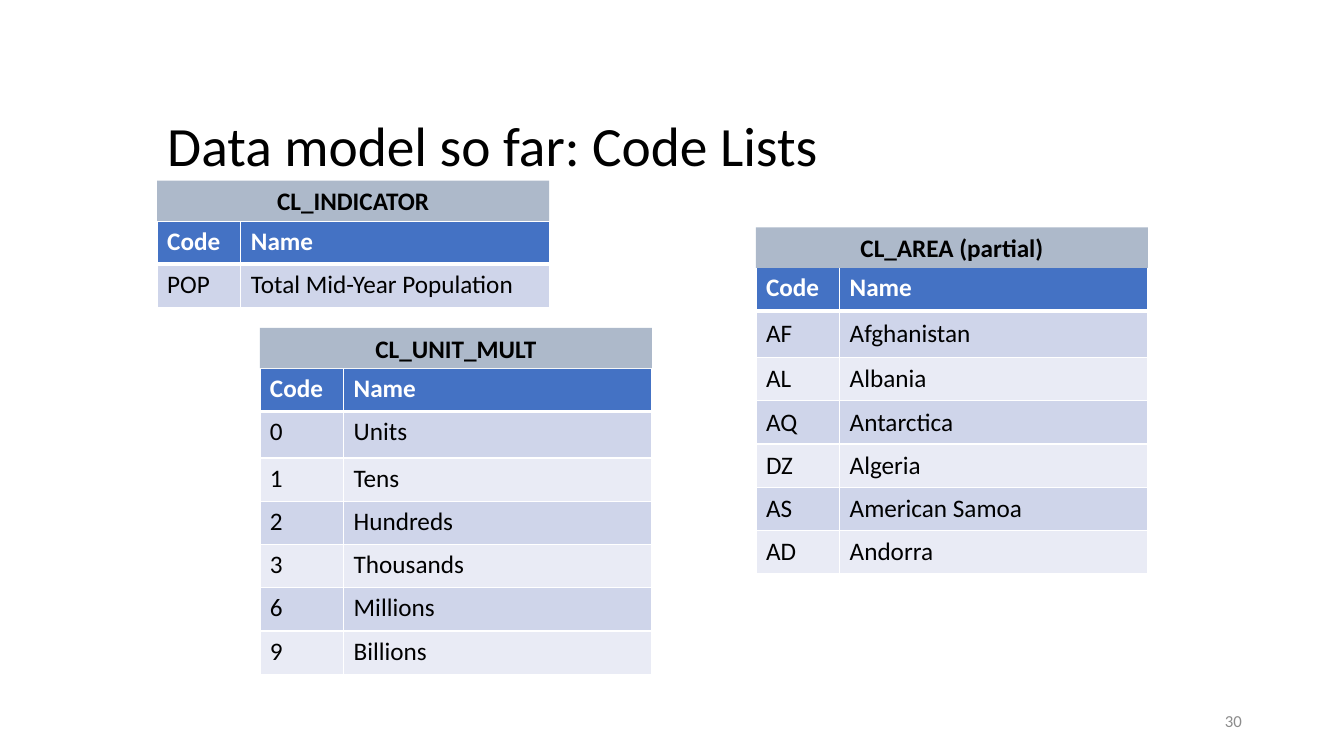
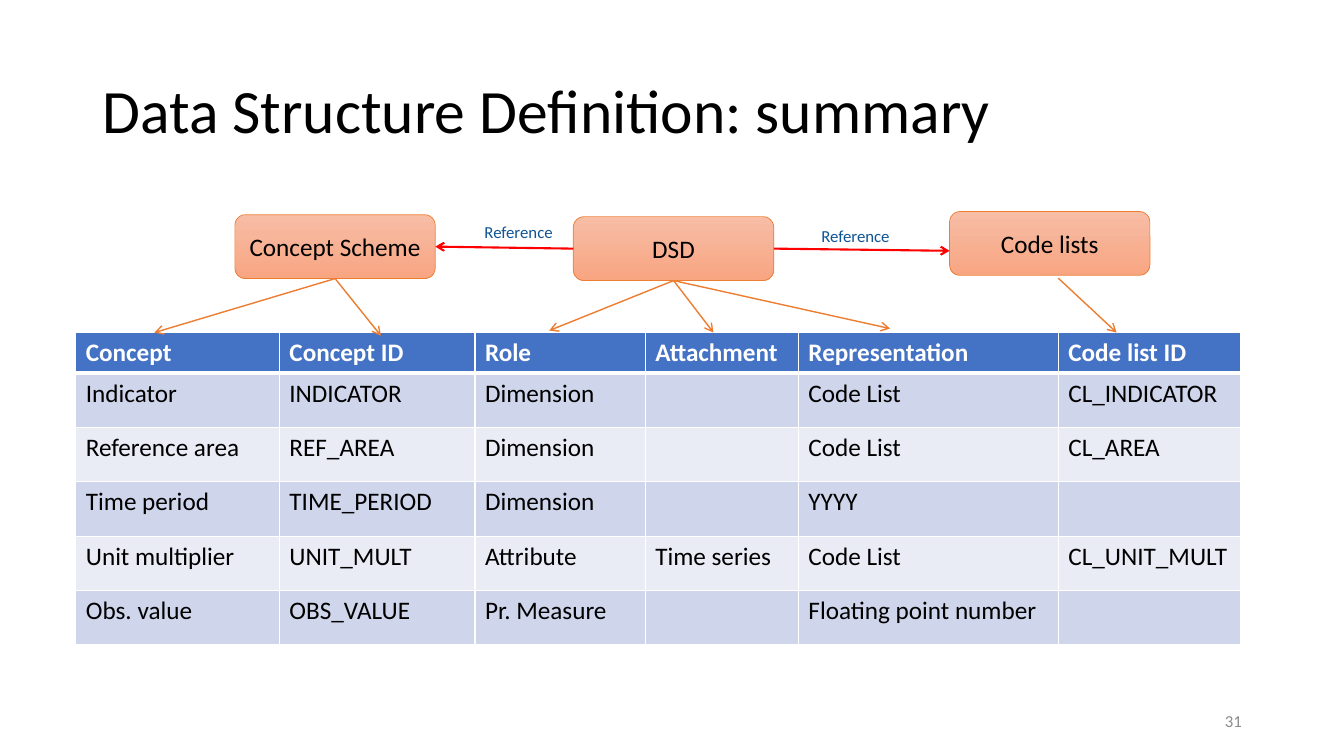
import pptx
import pptx.util
import pptx.dml.color
import pptx.enum.shapes
import pptx.enum.text
import pptx.oxml
import pptx.oxml.ns

Cm, Pt = pptx.util.Cm, pptx.util.Pt
SHAPES = pptx.enum.shapes.MSO_SHAPE
ALIGN = pptx.enum.text.PP_ALIGN
ANCHOR = pptx.enum.text.MSO_ANCHOR

FONT = "Calibri"
COLORS = {
    "text": "000000", "white": "FFFFFF", "page_number": "8C8C8C",
    "header": "4472C4", "band_dark": "CFD5EA", "band_light": "E9EBF5",
    "caption": "ADB9CA", "node_top": "F7BDA5", "node_bottom": "F8A582",
    "orange": "ED7D31", "red": "FF0000", "reference": "0F5494",
}
BOTTOM, LEFT, RIGHT = 2, 1, 3

# Lengths are in centimetres; boxes are left, top, width, height.
CODE_COLUMNS = (2.11, 7.77)
CAPTION_HEIGHT = 1.02
ROW_HEIGHT = 1.09
TALL_ROW_HEIGHT = 1.17
CODE_HEADER = ("Code", "Name")
CODE_LISTS = [
    {"name": "CL_INDICATOR", "left": 3.96, "top": 4.55, "anchor": ANCHOR.TOP,
     "codes": [("POP", "Total Mid-Year Population")]},
    {"name": "CL_UNIT_MULT", "left": 6.55, "top": 8.26, "anchor": ANCHOR.TOP,
     "codes": [("0", "Units"), ("1", "Tens"), ("2", "Hundreds"),
               ("3", "Thousands"), ("6", "Millions"), ("9", "Billions")]},
    {"name": "CL_AREA (partial)", "left": 19.05, "top": 5.73, "anchor": ANCHOR.MIDDLE,
     "codes": [("AF", "Afghanistan"), ("AL", "Albania"), ("AQ", "Antarctica"),
               ("DZ", "Algeria"), ("AS", "American Samoa"), ("AD", "Andorra")]},
]

CONCEPT_COLUMNS = (5.13, 4.93, 4.29, 3.86, 6.55, 4.6)
CONCEPTS = [
    ("Concept", "Concept ID", "Role", "Attachment", "Representation", "Code list ID"),
    ("Indicator", "INDICATOR", "Dimension", "", "Code List", "CL_INDICATOR"),
    ("Reference area", "REF_AREA", "Dimension", "", "Code List", "CL_AREA"),
    ("Time period", "TIME_PERIOD", "Dimension", "", "YYYY", ""),
    ("Unit multiplier", "UNIT_MULT", "Attribute", "Time series", "Code List",
     "CL_UNIT_MULT"),
    ("Obs. value", "OBS_VALUE", "Pr. Measure", "", "Floating point number", ""),
]
NODE_SIZE = (5.05, 1.61)
NODES = {"Concept Scheme": (5.92, 5.41), "DSD": (14.45, 5.46), "Code lists": (23.93, 5.33)}
# Each end is a point or a (node, side) pair.
ARROWS = [
    (("Concept Scheme", BOTTOM), (3.89, 8.38), "orange", 1),
    (("Concept Scheme", BOTTOM), (9.6, 8.46), "orange", 1),
    (("DSD", BOTTOM), (13.84, 8.33), "orange", 1),
    (("DSD", BOTTOM), (17.98, 8.38), "orange", 1),
    (("DSD", BOTTOM), (22.43, 8.28), "orange", 1),
    ((26.67, 7.01), (28.14, 8.38), "orange", 1),
    (("DSD", LEFT), ("Concept Scheme", RIGHT), "red", 1.5),
    (("DSD", RIGHT), (23.93, 6.32), "red", 1.5),
]
REFERENCE_LABELS = [(11.96, 5.46), (20.45, 5.56)]


def rgb(name):
    return pptx.dml.color.RGBColor.from_string(COLORS[name])


def write(frame, text, size=18, color="text", bold=False, align=ALIGN.LEFT):
    frame.text = text
    paragraph = frame.paragraphs[0]
    paragraph.alignment = align
    font = paragraph.font
    font.name, font.size, font.bold = FONT, Pt(size), bold
    font.color.rgb = rgb(color)
    return paragraph


def add_slide(deck, title, box, size, number):
    slide = deck.slides.add_slide(deck.slide_layouts[5])
    heading = slide.shapes.title
    heading.left, heading.top, heading.width, heading.height = map(Cm, box)
    heading.text_frame.vertical_anchor = ANCHOR.MIDDLE
    heading.text_frame.auto_size = pptx.enum.text.MSO_AUTO_SIZE.NONE
    write(heading.text_frame, title, size).line_spacing = 0.9
    add_label(slide, (23.93, 17.65, 7.62, 1.01), str(number), "page_number", ALIGN.RIGHT)
    return slide


def add_label(slide, box, text, color, align=ALIGN.LEFT):
    frame = slide.shapes.add_textbox(*map(Cm, box)).text_frame
    frame.word_wrap = True
    frame.vertical_anchor = ANCHOR.MIDDLE
    write(frame, text, 12, color, align=align)


def add_borders(cell, row):
    """White cell borders, thick between the header and the body."""
    widths = {"L": 1, "R": 1, "T": 3 if row == 1 else 1, "B": 3 if row == 0 else 1}
    for side, width in widths.items():
        cell._tc.get_or_add_tcPr().append(pptx.oxml.parse_xml(
            f'<a:ln{side} {pptx.oxml.ns.nsdecls("a")} w="{Pt(width)}"><a:solidFill>'
            f'<a:srgbClr val="{COLORS["white"]}"/></a:solidFill></a:ln{side}>'))


def add_banded_table(slide, left, top, columns, heights, rows, body_anchor=ANCHOR.TOP):
    table = slide.shapes.add_table(
        len(rows), len(columns), Cm(left), Cm(top),
        Cm(sum(columns)), Cm(sum(heights))).table
    for column, width in zip(table.columns, columns):
        column.width = Cm(width)
    for r, (values, height) in enumerate(zip(rows, heights)):
        table.rows[r].height = Cm(height)
        header = r == 0
        band = "header" if header else "band_dark" if r % 2 else "band_light"
        for c, value in enumerate(values):
            cell = table.cell(r, c)
            add_borders(cell, r)
            cell.fill.solid()
            cell.fill.fore_color.rgb = rgb(band)
            cell.vertical_anchor = ANCHOR.TOP if header else body_anchor
            write(cell.text_frame, value, color="white" if header else "text", bold=header)


def add_code_list(slide, code_list):
    left, top = code_list["left"], code_list["top"]
    codes = code_list["codes"]
    heights = [ROW_HEIGHT] * (len(codes) + 1)
    if len(codes) > 1:
        heights[1] = TALL_ROW_HEIGHT
    add_banded_table(slide, left, top + CAPTION_HEIGHT, CODE_COLUMNS, heights,
                     [CODE_HEADER] + codes, code_list["anchor"])
    caption = slide.shapes.add_shape(
        SHAPES.RECTANGLE, Cm(left), Cm(top), Cm(sum(CODE_COLUMNS)), Cm(CAPTION_HEIGHT))
    caption.shadow.inherit = False
    caption.fill.solid()
    caption.fill.fore_color.rgb = rgb("caption")
    caption.line.fill.background()
    write(caption.text_frame, code_list["name"], bold=True, align=ALIGN.CENTER)


def add_node(slide, name, position):
    node = slide.shapes.add_shape(SHAPES.ROUNDED_RECTANGLE, *map(Cm, position + NODE_SIZE))
    node.shadow.inherit = False
    node.fill.gradient()
    node.fill.gradient_angle = 270
    for stop, color in zip(node.fill.gradient_stops, ("node_top", "node_bottom")):
        stop.color.rgb = rgb(color)
    node.line.color.rgb = rgb("orange")
    node.line.width = Pt(0.5)
    node.text_frame.vertical_anchor = ANCHOR.MIDDLE
    write(node.text_frame, name, align=ALIGN.CENTER)
    return node


def add_arrow(slide, nodes, start, end, color, width):
    ends = [(0, 0) if point[0] in nodes else point for point in (start, end)]
    arrow = slide.shapes.add_connector(
        pptx.enum.shapes.MSO_CONNECTOR.STRAIGHT, *map(Cm, ends[0] + ends[1]))
    for point, connect in ((start, arrow.begin_connect), (end, arrow.end_connect)):
        if point[0] in nodes:
            connect(nodes[point[0]], point[1])
    arrow.line.color.rgb = rgb(color)
    arrow.line.width = Pt(width)
    namespace = pptx.oxml.ns.nsdecls("a")
    arrow.line._get_or_add_ln().append(
        pptx.oxml.parse_xml(f'<a:tailEnd {namespace} type="arrow"/>'))
    arrow._element.spPr.append(pptx.oxml.parse_xml(f"<a:effectLst {namespace}/>"))


def build_code_lists(deck):
    slide = add_slide(deck, "Data model so far: Code Lists",
                      (3.96, 3.02, 27.58, 1.42), 39.6, 30)
    for code_list in CODE_LISTS:
        add_code_list(slide, code_list)


def build_summary(deck):
    slide = add_slide(deck, "Data Structure Definition: summary",
                      (2.33, 1.01, 29.21, 3.68), 44, 31)
    heights = [1.02] + [1.37] * (len(CONCEPTS) - 1)
    add_banded_table(slide, 1.91, 8.38, CONCEPT_COLUMNS, heights, CONCEPTS)
    nodes = {name: add_node(slide, name, position) for name, position in NODES.items()}
    for arrow in ARROWS:
        add_arrow(slide, nodes, *arrow)
    for position in REFERENCE_LABELS:
        add_label(slide, position + (2.5, 0.77), "Reference", "reference")


def main():
    deck = pptx.Presentation()
    deck.slide_width, deck.slide_height = Cm(33.87), Cm(19.05)
    build_code_lists(deck)
    build_summary(deck)
    deck.save("out.pptx")


if __name__ == "__main__":
    main()
